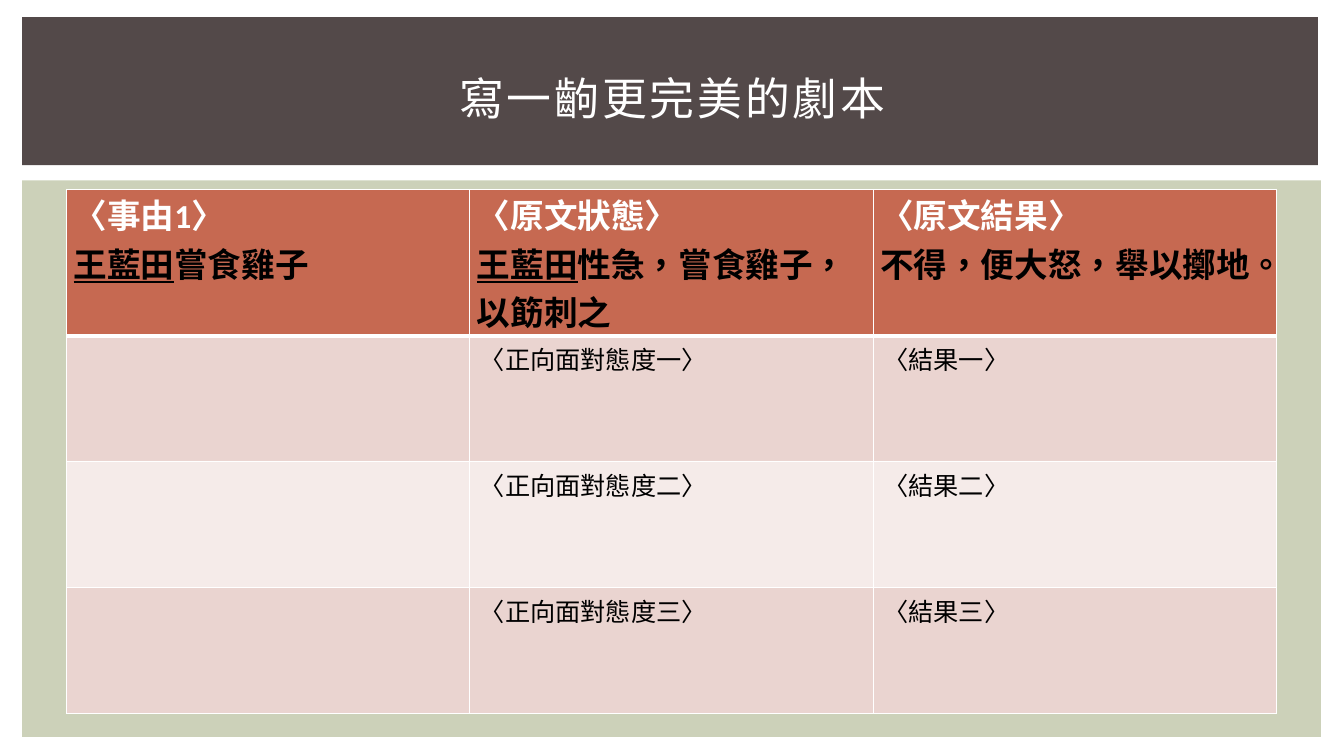
from pptx import Presentation
from pptx.dml.color import RGBColor
from pptx.enum.shapes import MSO_SHAPE
from pptx.enum.text import MSO_ANCHOR, PP_ALIGN
from pptx.oxml import parse_xml
from pptx.oxml.ns import nsdecls
from pptx.util import Inches, Pt

WHITE = RGBColor(0xFF, 0xFF, 0xFF)
BLACK = RGBColor(0x00, 0x00, 0x00)
SAGE = RGBColor(0xCC, 0xD1, 0xB9)
BROWN = RGBColor(0x53, 0x49, 0x49)
RUST = RGBColor(0xC6, 0x69, 0x51)
PINK = RGBColor(0xEA, 0xD4, 0xD0)
PALE = RGBColor(0xF5, 0xEB, 0xE9)

# Each heading: label, underlined name, rest of the sentence
HEADINGS = [
    ("〈事由1〉", "王藍田", "嘗食雞子"),
    ("〈原文狀態〉", "王藍田", "性急，嘗食雞子，以筯刺之"),
    ("〈原文結果〉", "", "不得，便大怒，舉以擲地。"),
]
ROW_NUMBERS = "一二三"


def add_text(p, text, font="Cabin", size=18, color=BLACK, bold=False,
             underline=False, spacing=0):
    r = p.add_run()
    r.text = text
    f = r.font
    f.name, f.size, f.bold, f.underline = font, Pt(size), bold, underline
    f.color.rgb = color
    rPr = r._r.get_or_add_rPr()
    rPr.set("lang", "zh-TW")
    if spacing:
        rPr.set("spc", str(spacing * 100))


class ScriptSlide:
    """Holds the slide and its border colour."""

    def __init__(self, prs, border=WHITE):
        self.s = prs.slides.add_slide(prs.slide_layouts[6])
        self.border = border

    def panel(self, x, y, w, h, color):
        sp = self.s.shapes.add_shape(
            MSO_SHAPE.RECTANGLE, Inches(x), Inches(y), Inches(w), Inches(h))
        sp.shadow.inherit = False
        sp.fill.solid()
        sp.fill.fore_color.rgb = color
        sp.line.fill.background()

    def title(self, x, y, w, h, text):
        sp = self.s.shapes.add_textbox(Inches(x), Inches(y), Inches(w), Inches(h))
        tf = sp.text_frame
        tf.word_wrap = True
        tf.vertical_anchor = MSO_ANCHOR.MIDDLE
        p = tf.paragraphs[0]
        p.alignment = PP_ALIGN.CENTER
        add_text(p, text, size=32, color=WHITE, spacing=2)

    def table(self, x, y, col_width, row_heights, cols):
        frame = self.s.shapes.add_table(
            len(row_heights), cols, Inches(x), Inches(y),
            Inches(col_width * cols), Inches(sum(row_heights)))
        table = frame.table
        for col in table.columns:
            col.width = Inches(col_width)
        for row, height in zip(table.rows, row_heights):
            row.height = Inches(height)
        return table

    def style_cell(self, cell, color, bottom=1, top=1):
        tcPr = cell._tc.get_or_add_tcPr()
        for side, width in (("L", 1), ("R", 1), ("T", top), ("B", bottom)):
            tcPr.append(parse_xml(
                f'<a:ln{side} {nsdecls("a")} w="{Pt(width)}"><a:solidFill>'
                f'<a:srgbClr val="{self.border}"/></a:solidFill></a:ln{side}>'))
        cell.fill.solid()
        cell.fill.fore_color.rgb = color

    def heading(self, cell, label, name, rest):
        self.style_cell(cell, RUST, bottom=3)
        cell.margin_left = cell.margin_right = Inches(0.07)
        cell.margin_top = cell.margin_bottom = 0
        style = {"font": "Calibri", "size": 24, "bold": True}
        tf = cell.text_frame
        add_text(tf.paragraphs[0], label, color=WHITE, **style)
        p = tf.add_paragraph()
        if name:
            add_text(p, name, underline=True, **style)
        add_text(p, rest, **style)


def main():
    prs = Presentation()
    prs.slide_width, prs.slide_height = Inches(13.33), Inches(7.5)
    slide = ScriptSlide(prs)

    # Background panels and title
    slide.panel(0.22, 1.79, 12.88, 5.52, SAGE)
    slide.panel(0.22, 0.17, 12.85, 1.47, BROWN)
    slide.title(0.56, 0.39, 12.22, 1.15, "寫一齣更完美的劇本")

    # Table headings
    table = slide.table(0.66, 1.88, 4, [1.45] + [1.25] * 3, len(HEADINGS))
    for col, heading in enumerate(HEADINGS):
        slide.heading(table.cell(0, col), *heading)

    # Rows to fill in
    for row, number in enumerate(ROW_NUMBERS, 1):
        texts = ("", f"〈正向面對態度{number}〉", f"〈結果{number}〉")
        for col, text in enumerate(texts):
            cell = table.cell(row, col)
            slide.style_cell(cell, PINK if row % 2 else PALE,
                             top=3 if row == 1 else 1)
            if text:
                add_text(cell.text_frame.paragraphs[0], text)

    prs.save("out.pptx")


if __name__ == "__main__":
    main()
